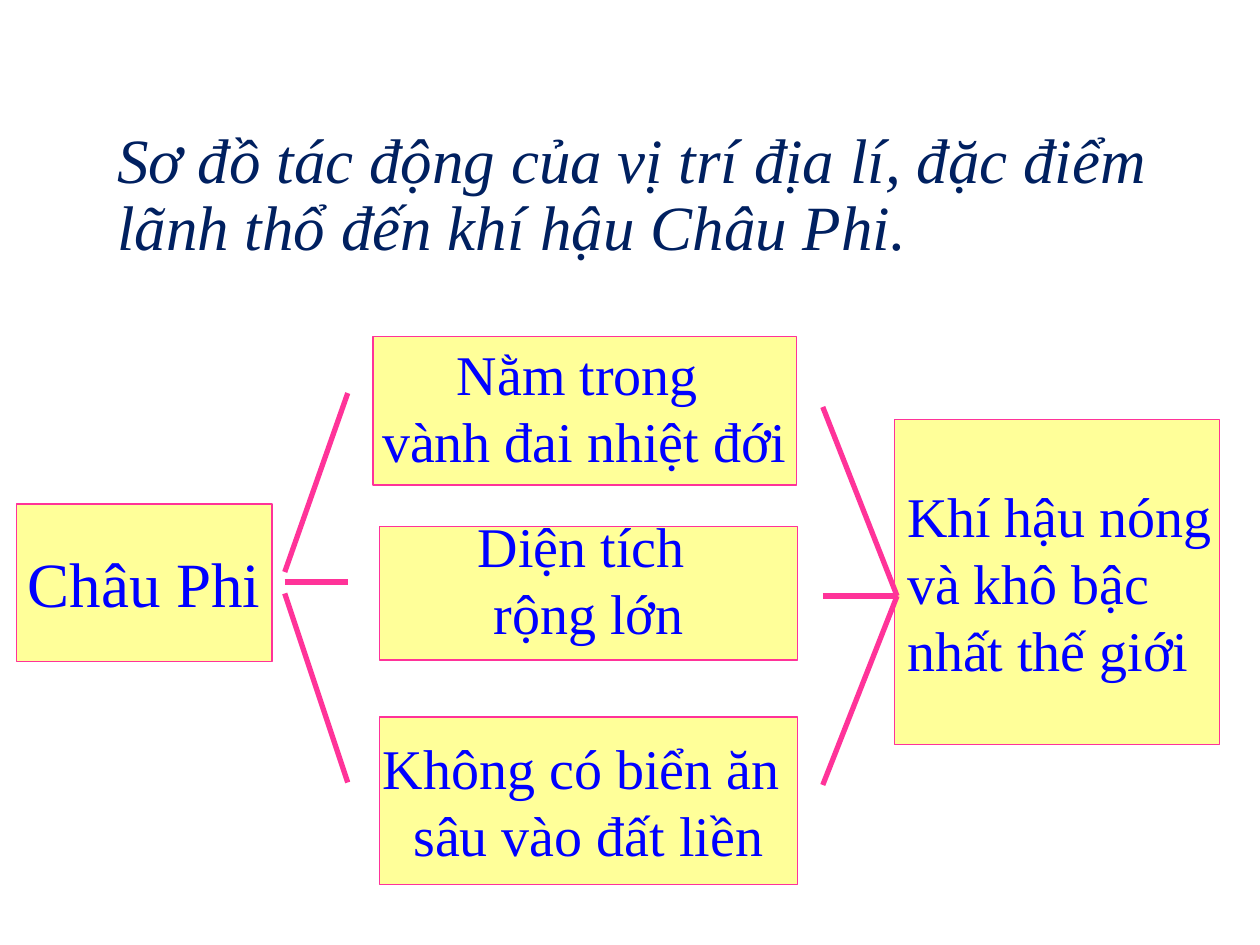
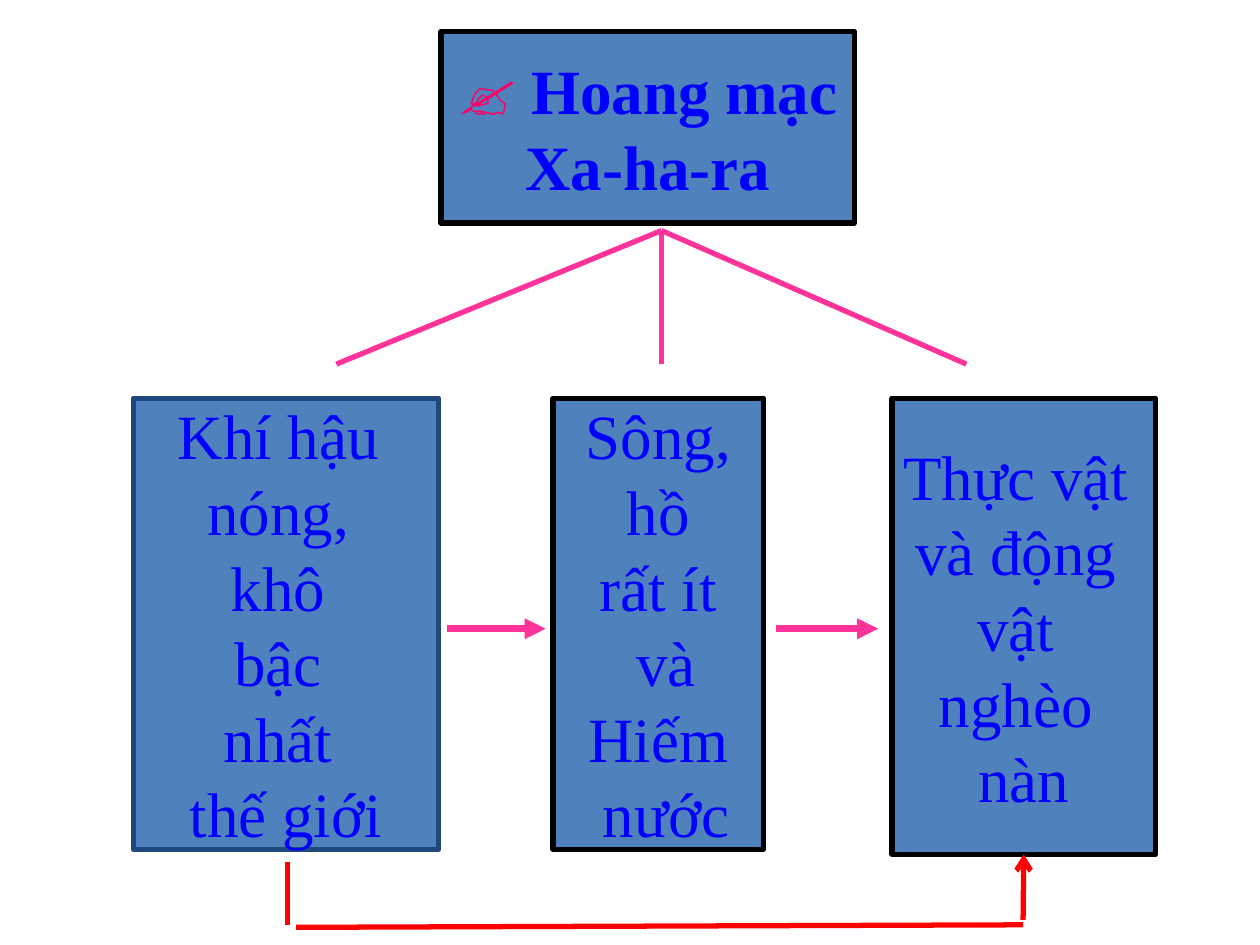
from lxml.etree import SubElement
from pptx import Presentation
from pptx.dml.color import RGBColor
from pptx.enum.shapes import MSO_CONNECTOR, MSO_SHAPE
from pptx.enum.text import MSO_ANCHOR, PP_ALIGN
from pptx.oxml.ns import qn
from pptx.util import Inches, Pt

FONT = "Times New Roman"
NAVY, BLUE, PINK, RED = "002060", "0000FF", "FF3399", "FF0000"
YELLOW, STEEL, BLACK, DARK_BLUE = "FFFF99", "4F81BD", "000000", "1F497D"
TITLE_ONLY, BLANK = 5, 6


def paint(target, color):
    target.rgb = RGBColor.from_string(color)


def set_values(target, values):
    for name, value in values.items():
        setattr(target, name, value)


def write_para(para, spans, size, align, **font_values):
    para.alignment = align
    for text, color in spans:
        span = para.add_run()
        span.text = text
        set_values(span.font, {"name": FONT, "size": Pt(size), **font_values})
        paint(span.font.color, color)


def add_box(page, place, lines, size, fill, outline, width,
            align=PP_ALIGN.CENTER, lift=0, **font_values):
    box = page.shapes.add_shape(MSO_SHAPE.RECTANGLE, *map(Inches, place))
    box.shadow.inherit = False
    box.fill.solid()
    paint(box.fill.fore_color, fill)
    paint(box.line.color, outline)
    box.line.width = Pt(width)
    frame = box.text_frame
    set_values(frame, {
        "word_wrap": False,
        "vertical_anchor": MSO_ANCHOR.MIDDLE,
        "margin_bottom": Inches(0.05 + 2 * lift),
    })
    for number, line in enumerate(lines):
        para = frame.add_paragraph() if number else frame.paragraphs[0]
        spans = [(line, BLUE)] if isinstance(line, str) else line
        write_para(para, spans, size, align, **font_values)
    return box


def add_line(page, start, end, color=PINK, width=3, head=None):
    line = page.shapes.add_connector(
        MSO_CONNECTOR.STRAIGHT, *map(Inches, (*start, *end)))
    paint(line.line.color, color)
    line.line.width = Pt(width)
    properties = line._element.spPr
    if head:
        SubElement(properties.find(qn("a:ln")), qn("a:tailEnd"), type=head)
    SubElement(properties, qn("a:effectLst"))
    return line


def add_title(page, place, lines):
    title = page.shapes.title
    set_values(title, dict(zip(("left", "top", "width", "height"), map(Inches, place))))
    frame = title.text_frame
    set_values(frame, {
        "word_wrap": True,
        "vertical_anchor": MSO_ANCHOR.TOP,
        "margin_top": Inches(0.7),
        "margin_right": 0,
    })
    for number, line in enumerate(lines):
        para = frame.add_paragraph() if number else frame.paragraphs[0]
        write_para(para, [(line, NAVY)], 36, PP_ALIGN.LEFT, italic=True)
        para.line_spacing = Pt(38)


def add_cause_fan(page, left, top):
    for start, end in ((1.42, 0), (1.5, 1.5), (1.59, 3.09)):
        add_line(page, (left, top + start), (left + 0.5, top + end))


def add_result_fan(page, left, top):
    hub = (left + 0.59, top + 1.5)
    for row in range(3):
        add_line(page, (left, top + 1.5 * row), hub)


def build_climate_page(deck):
    page = deck.slides.add_slide(deck.slide_layouts[TITLE_ONLY])
    add_title(page, (0.83, 0.33, 8.42, 1.56), [
        "Sơ đồ tác động của vị trí địa lí, đặc điểm",
        "lãnh thổ đến khí hậu Châu Phi.",
    ])
    style = {"fill": YELLOW, "outline": PINK, "width": 0.75}
    add_box(page, (0.13, 4, 2.03, 1.25), ["Châu Phi"], 36, **style)
    factors = [
        ((2.96, 2.67, 3.36, 1.18), ["Nằm trong ", "vành đai nhiệt đới"], 0.03),
        ((3.01, 4.18, 3.32, 1.06), ["Diện tích ", "rộng lớn"], 0.12),
        ((3.01, 5.69, 3.32, 1.33), ["Không có biển ăn ", "sâu vào đất liền"], 0),
    ]
    for place, lines, lift in factors:
        add_box(page, place, lines, 32, lift=lift, **style)
    add_box(page, (7.1, 3.33, 2.58, 2.58),
            ["Khí hậu nóng", "và khô bậc", "nhất thế giới"],
            32, align=PP_ALIGN.LEFT, **style)
    add_cause_fan(page, 2.26, 3.12)
    add_result_fan(page, 6.53, 3.23)


def add_desert_features(page, top):
    features = [
        (1.06, 2.42, 3.58, DARK_BLUE,
         ["Khí hậu ", "nóng, ", "khô ", "bậc ", "nhất ", "thế giới"]),
        (4.39, 1.67, 3.58, BLACK,
         ["Sông,", " hồ ", "rất ít", " và", "Hiếm", " nước"]),
        (7.08, 2.09, 3.62, BLACK,
         ["Thực vật ", "và động ", "vật ", "nghèo ", "nàn"]),
    ]
    boxes = [
        add_box(page, (left, top, width, height), lines, 36, STEEL, outline, 3)
        for left, width, height, outline, lines in features
    ]
    middle = top + 1.83
    for start, end in ((3.55, 4.33), (6.16, 6.97)):
        add_line(page, (start, middle), (end, middle), width=4, head="triangle")
    return boxes


def add_return_path(page, plants, left, top):
    add_line(page, (left, top), (left, top + 0.5), RED)
    add_line(page, (left + 0.07, top + 0.52), (left + 5.84, top + 0.5), RED)
    arrow = add_line(page, (left + 5.84, top + 0.46), (left + 5.85, top - 0.04),
                     RED, head="arrow")
    arrow.end_connect(plants, 2)


def build_desert_page(deck):
    page = deck.slides.add_slide(deck.slide_layouts[BLANK])
    heading = [[("✍ ", "FF0066"), ("Hoang mạc", BLUE)], "Xa-ha-ra"]
    add_box(page, (3.5, 0.25, 3.28, 1.52), heading, 36, STEEL, BLACK, 3, bold=True)
    for end in (2.67, 5.25, 7.67):
        add_line(page, (5.25, 1.83), (end, 2.89))
    plants = add_desert_features(page, 3.16)[-1]
    add_return_path(page, plants, 2.28, 6.84)


def main():
    deck = Presentation()
    set_values(deck, {"slide_width": Inches(10), "slide_height": Inches(7.5)})
    build_climate_page(deck)
    build_desert_page(deck)
    deck.save("out.pptx")


if __name__ == "__main__":
    main()
